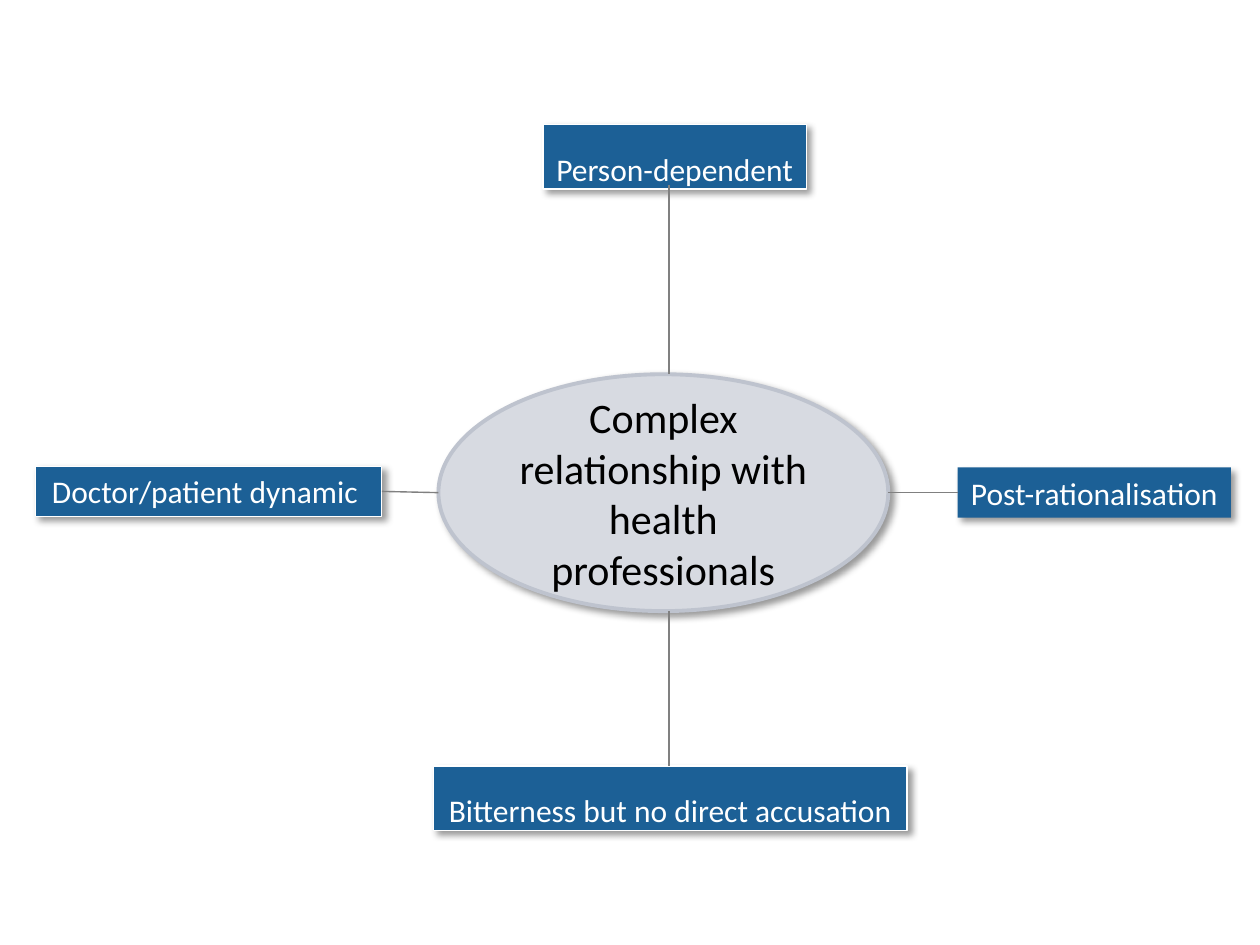
from lxml import etree
from pptx import Presentation
from pptx.dml.color import RGBColor
from pptx.enum.shapes import MSO_CONNECTOR, MSO_SHAPE
from pptx.enum.text import MSO_ANCHOR, MSO_AUTO_SIZE, PP_ALIGN
from pptx.oxml import parse_xml
from pptx.oxml.ns import qn
from pptx.util import Inches, Pt

RECTANGLE, OVAL = MSO_SHAPE.RECTANGLE, MSO_SHAPE.OVAL
STRAIGHT = MSO_CONNECTOR.STRAIGHT
TOP, MIDDLE = MSO_ANCHOR.TOP, MSO_ANCHOR.MIDDLE
FIT_SHAPE = MSO_AUTO_SIZE.SHAPE_TO_FIT_TEXT
CENTER = PP_ALIGN.CENTER

WHITE = RGBColor(0xFF, 0xFF, 0xFF)
BLACK = RGBColor(0x00, 0x00, 0x00)
BLUE = RGBColor(0x1C, 0x60, 0x96)
PALE = RGBColor(0xD7, 0xDA, 0xE1)
RIM = RGBColor(0xBE, 0xC3, 0xCE)
GREY = RGBColor(0x80, 0x80, 0x80)

FONT = "Calibri"
CELL = Inches(0.1)  # the slide is a grid of 100 columns by 75 rows
LEFT_SIDE, RIGHT_SIDE = 1, 3

HUB = (34.8, 29.7, 35.7, 18.8)
HUB_TEXT = "Complex relationship with health professionals"
SPOKE_COLUMN = 53.1  # shared by the upper and lower lines

SHADOW = (
    '<a:effectLst xmlns:a="http://schemas.openxmlformats.org/drawingml/2006/main">'
    '<a:outerShdw blurRad="50800" dist="38100" dir="2700000" algn="tl" rotWithShape="0">'
    '<a:srgbClr val="000000"><a:alpha val="40000"/></a:srgbClr>'
    '</a:outerShdw></a:effectLst>'
)


def grid(*cells):
    return [round(cell * CELL) for cell in cells]


def add_node(slide, box, text, kind, fill, rim, rim_width, size, colour):
    """Add a filled, shadowed shape with one centred paragraph."""
    node = slide.shapes.add_shape(kind, *grid(*box))
    node.fill.solid()
    node.fill.fore_color.rgb = fill
    if rim is None:
        node.line.fill.background()
    else:
        node.line.color.rgb = rim
        node.line.width = Pt(rim_width)
    node._element.spPr.append(parse_xml(SHADOW))
    paragraph = node.text_frame.paragraphs[0]
    paragraph.text = text
    paragraph.alignment = CENTER
    paragraph.font.name = FONT
    paragraph.font.size = Pt(size)
    paragraph.font.color.rgb = colour
    return node


def add_hub(slide, box):
    hub = add_node(slide, box, HUB_TEXT, OVAL, PALE, RIM, 2.22, 24, BLACK)
    hub.text_frame.vertical_anchor = MIDDLE
    hub.text_frame.word_wrap = True


def add_theme(slide, box, text, rim=WHITE, wrap=False, spacing=None):
    theme = add_node(slide, box, text, RECTANGLE, BLUE, rim, 0.75, 18, WHITE)
    frame = theme.text_frame
    frame.vertical_anchor = TOP
    frame.word_wrap = wrap
    frame.auto_size = FIT_SHAPE
    frame.paragraphs[0].line_spacing = spacing
    return theme


def add_spoke(slide, start, end):
    spoke = slide.shapes.add_connector(STRAIGHT, *grid(*start, *end))
    spoke.line.color.rgb = GREY
    spoke.line.width = Pt(0.79)
    etree.SubElement(spoke._element.spPr, qn("a:effectLst"))
    return spoke


def add_mind_map(slide, hub_box):
    left, top, width, height = hub_box
    right, bottom, middle = left + width, top + height, top + height / 2

    post = add_theme(slide, (76, 37.1, 21.7, 4), "Post-rationalisation", rim=None)
    add_hub(slide, hub_box)
    dynamic = add_theme(slide, (2.8, 37, 27.5, 4), "Doctor/patient dynamic ", wrap=True)
    add_theme(slide, (34.4, 60.8, 37.6, 5.1),
              "Bitterness but no direct accusation", spacing=1.5)
    add_theme(slide, (43.1, 9.9, 20.9, 5.1), "Person-dependent", spacing=1.5)

    for theme, side, hub_edge in ((post, LEFT_SIDE, right), (dynamic, RIGHT_SIDE, left)):
        hub_point = (hub_edge, middle)
        add_spoke(slide, hub_point, hub_point).begin_connect(theme, side)
    for start_row, end_row in ((14.7, top), (bottom, 60.8)):
        add_spoke(slide, (SPOKE_COLUMN, start_row), (SPOKE_COLUMN, end_row))


def main():
    deck = Presentation()
    deck.slide_width, deck.slide_height = grid(100, 75)
    slide = deck.slides.add_slide(deck.slide_layouts[6])
    add_mind_map(slide, HUB)
    deck.save("out.pptx")


if __name__ == "__main__":
    main()
